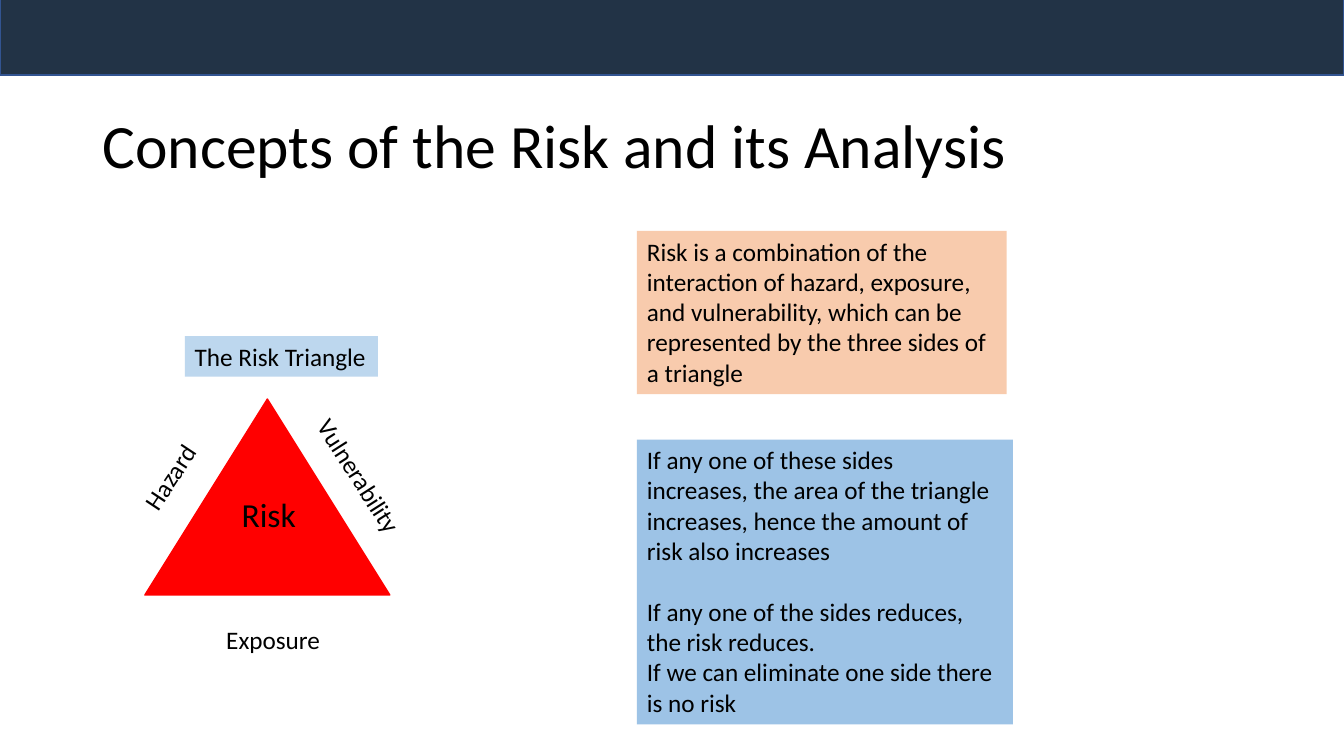
import pptx
import pptx.util
import pptx.dml.color
import pptx.enum.shapes
import pptx.enum.text

Pt = pptx.util.Pt
RGBColor = pptx.dml.color.RGBColor
MSO_SHAPE = pptx.enum.shapes.MSO_SHAPE

NAVY = RGBColor(0x22, 0x33, 0x46)
NAVY_EDGE = RGBColor(0x32, 0x54, 0x91)
RED = RGBColor(0xFF, 0x00, 0x00)
PALE_BLUE = RGBColor(0xBD, 0xD7, 0xEE)
PEACH = RGBColor(0xF8, 0xCB, 0xAD)
SKY_BLUE = RGBColor(0x9D, 0xC3, 0xE6)
BLACK = RGBColor(0x00, 0x00, 0x00)

FONT = "Calibri"
BODY_SIZE = 18
BLANK_LINE = 22
SLIDE_WIDTH, SLIDE_HEIGHT = 960, 540

TITLE = "Concepts of the Risk and its Analysis"

# Each text is a list of groups; a group is a list of lines.
# Text, (left, top, width, height), format
LABELS = [
    ([["The Risk Triangle"]], (132, 240, 138, 29), {"fill": PALE_BLUE}),
    ([["Risk"]], (165.5, 349, 55, 36), {"size": 24, "wrap": True}),
    ([["Vulnerability"]], (203, 326, 108, 29), {"rotation": 57.4}),
    ([["Hazard"]], (88.5, 326, 65.5, 29), {"rotation": 303.5}),
    ([["Exposure"]], (154.5, 442.5, 82, 29), {}),
]
NOTES_LEFT = 455
NOTES = [
    ([["Risk is a combination of the",
       "interaction of hazard, exposure,",
       "and vulnerability, which can be",
       "represented by the three sides of",
       "a triangle"]],
     (NOTES_LEFT, 165, 264, 116.5), {"fill": PEACH}),
    ([["If any one of these sides",
       "increases, the area of the triangle",
       "increases, hence the amount of",
       "risk also increases"],
      ["If any one of the sides reduces,",
       "the risk reduces.",
       "If we can eliminate one side there",
       "is no risk"]],
     (NOTES_LEFT, 314, 268.5, 203.5), {"fill": SKY_BLUE}),
]


def style_font(font, size):
    font.name = FONT
    font.size = Pt(size)
    font.color.rgb = BLACK


def add_text(slide, groups, box, size=BODY_SIZE, fill=None, rotation=0, wrap=False):
    """Add a text box with a blank-line gap between groups of lines."""
    text_box = slide.shapes.add_textbox(*map(Pt, box))
    text_box.rotation = rotation
    if fill is not None:
        text_box.fill.solid()
        text_box.fill.fore_color.rgb = fill
    frame = text_box.text_frame
    frame.word_wrap = wrap
    frame.auto_size = pptx.enum.text.MSO_AUTO_SIZE.SHAPE_TO_FIT_TEXT
    frame.text = "\n".join(line for group in groups for line in group)
    for paragraph in frame.paragraphs:
        style_font(paragraph.font, size)
    group_start = 0
    for group in groups[:-1]:
        group_start += len(group)
        frame.paragraphs[group_start].space_before = Pt(BLANK_LINE)


def add_solid(slide, preset, box, fill, edge):
    solid = slide.shapes.add_shape(preset, *map(Pt, box))
    solid.shadow.inherit = False
    solid.fill.solid()
    solid.fill.fore_color.rgb = fill
    solid.line.color.rgb = edge
    solid.line.width = Pt(1)


def format_title(title):
    title.left, title.top, title.width, title.height = map(Pt, (66, 54, 828, 104.5))
    title.text_frame.text = TITLE
    title.text_frame.vertical_anchor = pptx.enum.text.MSO_ANCHOR.MIDDLE
    paragraph = title.text_frame.paragraphs[0]
    paragraph.alignment = pptx.enum.text.PP_ALIGN.LEFT
    paragraph.line_spacing = 0.9
    style_font(paragraph.font, 44)


def main():
    deck = pptx.Presentation()
    deck.slide_width, deck.slide_height = Pt(SLIDE_WIDTH), Pt(SLIDE_HEIGHT)
    slide = deck.slides.add_slide(deck.slide_layouts[5])
    format_title(slide.shapes.title)
    add_solid(slide, MSO_SHAPE.RECTANGLE, (0, -2.5, SLIDE_WIDTH, 56), NAVY, NAVY_EDGE)
    add_solid(slide, MSO_SHAPE.ISOSCELES_TRIANGLE, (103.5, 285, 175, 140), RED, RED)
    for groups, box, text_format in LABELS + NOTES:
        add_text(slide, groups, box, **text_format)
    deck.save("out.pptx")


if __name__ == "__main__":
    main()
